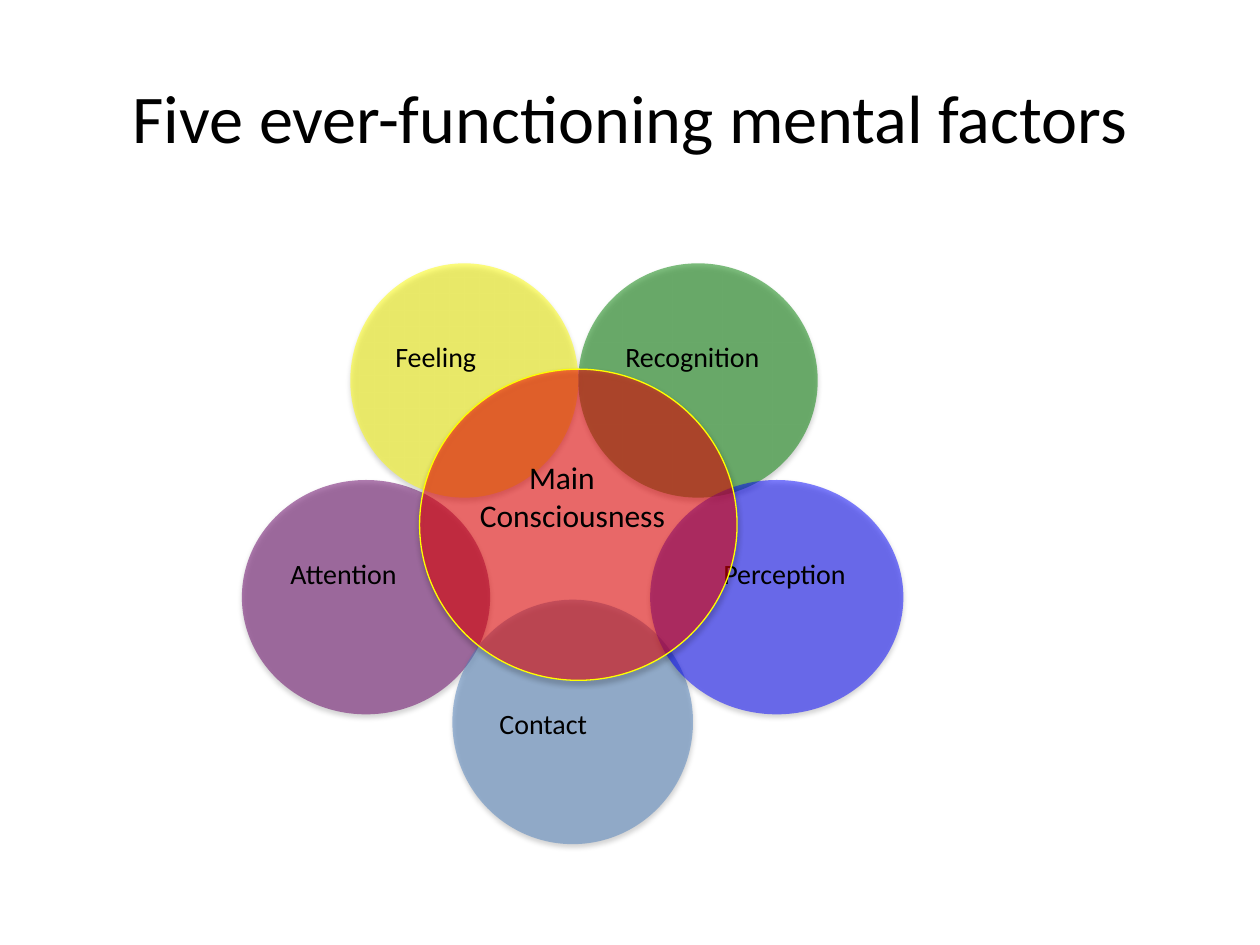
from lxml.etree import SubElement
from pptx import Presentation
from pptx.dml.color import RGBColor
from pptx.enum.shapes import MSO_SHAPE
from pptx.enum.text import MSO_ANCHOR, PP_ALIGN
from pptx.oxml.ns import qn
from pptx.util import Inches, Pt

BLACK = RGBColor(0x00, 0x00, 0x00)
PURPLE = RGBColor(0x66, 0x00, 0x66)
GREEN = RGBColor(0x00, 0x80, 0x00)
YELLOW = RGBColor(0xFF, 0xFF, 0x00)
STEEL = RGBColor(0x4F, 0x81, 0xBD)
BLUE = RGBColor(0x00, 0x00, 0xFF)
RED = RGBColor(0xFF, 0x00, 0x00)

# name, colour, circle (left, top, width, height), label height, first-line indent
FACTORS = [
    ("Attention", PURPLE, (1.92, 3.81, 1.97, 1.86), 0.65, 0),
    ("Recognition", GREEN, (4.59, 2.09, 1.9, 1.86), 0.65, 0),
    ("Feeling", YELLOW, (2.78, 2.09, 1.81, 1.86), 0.65, 0),
    ("Contact", STEEL, (3.59, 4.76, 1.91, 1.94), 0.88, 0),
    ("Perception", BLUE, (5.16, 3.81, 2.01, 1.86), 0.65, 0.19),
]


class Venn:
    """Style and current slide of the overlapping-circles diagram."""

    font = "Calibri"
    frame = dict(word_wrap=True, margin_left=Inches(0.05), margin_right=Inches(0.05),
                 margin_top=Inches(0.05), margin_bottom=Inches(0.05))

    def __init__(self, prs):
        self.s = prs.slides.add_slide(prs.slide_layouts[5])

    def set_text(self, tf, text, size, anchor, align):
        for name, value in dict(self.frame, vertical_anchor=anchor).items():
            setattr(tf, name, value)
        p = tf.paragraphs[0]
        p.alignment = align
        r = p.add_run()
        r.text = text
        for name, value in dict(name=self.font, size=Pt(size)).items():
            setattr(r.font, name, value)
        r.font.color.rgb = BLACK
        return p

    def title(self, text):
        sp = self.s.shapes.title
        box = dict(left=0.5, top=0.3, width=9, height=1.25)
        for name, value in box.items():
            setattr(sp, name, Inches(value))
        self.set_text(sp.text_frame, text, 39, MSO_ANCHOR.MIDDLE, PP_ALIGN.CENTER)

    def circle(self, group, color, box, line):
        sp = group.shapes.add_shape(MSO_SHAPE.OVAL, *map(Inches, box))
        sp.fill.solid()
        sp.fill.fore_color.rgb = color
        if line is None:
            sp.line.fill.background()
        else:
            sp.line.color.rgb = line
            sp.line.width = Pt(0.75)
        # Half-transparent fill
        sp_pr = sp._element.spPr
        clr = sp_pr.find(qn("a:solidFill"))[0]
        SubElement(clr, qn("a:alpha"), val="50000")
        # Soft shadow straight below
        sp.shadow.inherit = False
        effects = sp_pr.find(qn("a:effectLst"))
        shadow = SubElement(effects, qn("a:outerShdw"), blurRad=str(Pt(3)),
                            dist=str(Pt(1.8)), dir="5400000", rotWithShape="0")
        black = SubElement(shadow, qn("a:srgbClr"), val=str(BLACK))
        SubElement(black, qn("a:alpha"), val="35000")

    def factor(self, text, color, box, label_height, indent, size=16, line=None):
        """A circle grouped with its label, which sits on the label box's bottom."""
        group = self.s.shapes.add_group_shape()
        self.circle(group, color, box, line)
        x, y, w, h = box
        label = (x + 0.17 * w, y + 0.145 * h, 0.66 * w, label_height)
        sp = group.shapes.add_textbox(*map(Inches, label))
        p = self.set_text(sp.text_frame, text, size, MSO_ANCHOR.BOTTOM, PP_ALIGN.LEFT)
        if indent:
            p._p.get_or_add_pPr().set("indent", str(Inches(indent)))


def main():
    prs = Presentation()
    prs.slide_width, prs.slide_height = Inches(10), Inches(7.5)
    venn = Venn(prs)
    venn.title("Five ever-functioning mental factors")

    # Outer circles, then the central one on top
    for factor in FACTORS:
        venn.factor(*factor)
    venn.factor("Main Consciousness", RED, (3.33, 2.93, 2.52, 2.47), 1, 0.39,
                size=18, line=YELLOW)

    prs.save("out.pptx")


if __name__ == "__main__":
    main()
